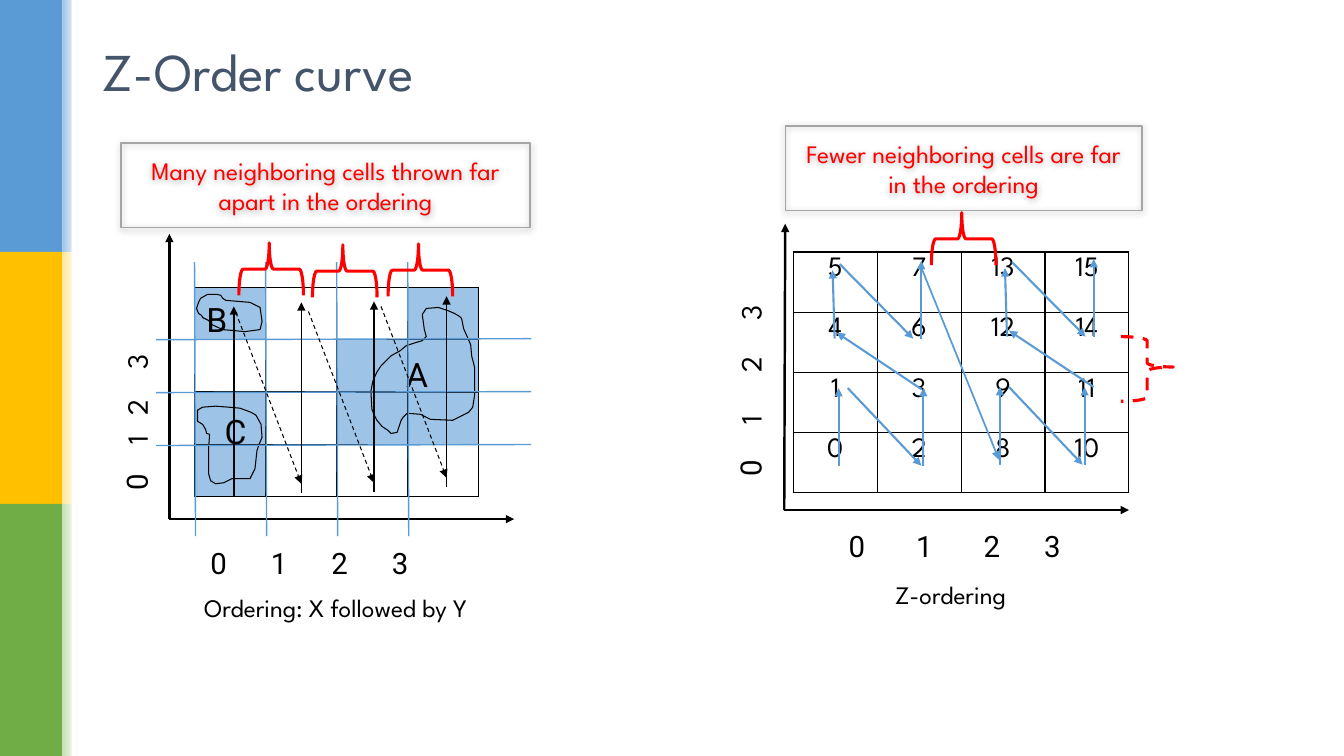
from dataclasses import dataclass
from typing import Any

from lxml import etree
from pptx import Presentation
from pptx import util as u
from pptx.dml.color import RGBColor
from pptx.enum import dml, shapes, text
from pptx.oxml import ns

GRID = u.Inches(0.1)
COLUMNS, ROWS = 133.33, 75
COLORS = {"black": "000000", "white": "FFFFFF", "title": "44546A", "blue": "5B9BD5", "pale": "9DC3E6",
          "red": "FF0000", "gray": "A5A5A5", "yellow": "FFC000", "cream": "FFE699", "green": "70AD47",
          "mint": "C5E0B4"}
SPARTAN, ROBOTO = "League Spartan", "Roboto"
CENTERED = {"alignment": text.PP_ALIGN.CENTER}
MIDDLE = {"word_wrap": True, "vertical_anchor": text.MSO_ANCHOR.MIDDLE}
Point = tuple[float, float]


@dataclass
class Area:
    left: float
    top: float
    width: float
    height: float

    def lengths(self) -> list[int]:
        return [grid(side) for side in (self.left, self.top, self.width, self.height)]


@dataclass
class Stroke:
    start: Point
    end: Point
    color: str = "blue"
    weight: float = 1.5
    arrow: bool = True
    dashed: bool = False

    def moved(self, column: float, row: float) -> "Stroke":
        (a, b), (c, d) = self.start, self.end
        return Stroke((a + column, b + row), (c + column, d + row), self.color, self.weight, self.arrow, self.dashed)


@dataclass
class Brace:
    area: Area
    rotation: int = 90
    dashed: bool = False


@dataclass
class Region:
    name: str
    margin_left: float
    margin_top: float
    outline: list[tuple[int, int]]


def grid(count: float) -> int:
    return round(count * GRID)


def rgb(name: str) -> RGBColor:
    return RGBColor.from_string(COLORS[name])


def apply(target: Any, values: dict[str, Any]) -> None:
    for name, value in values.items():
        setattr(target, name, value)


def write(frame: Any, words: str, size: float, font: str = SPARTAN, color: str = "black",
          frame_values: dict[str, Any] = MIDDLE, para_values: dict[str, Any] = CENTERED) -> None:
    apply(frame, frame_values)
    para = frame.paragraphs[0]
    apply(para, para_values)
    span = para.add_run()
    apply(span, {"text": words})
    apply(span.font, {"size": u.Pt(size), "name": font})
    span.font.color.rgb = rgb(color)


def style_line(line: Any, color: str, weight: float, dashed: bool = False) -> None:
    line.color.rgb = rgb(color)
    line.width = u.Pt(weight)
    if dashed:
        line.dash_style = dml.MSO_LINE.DASH


def draw_stroke(page: Any, stroke: Stroke) -> None:
    ends = [grid(value) for value in (*stroke.start, *stroke.end)]
    connector = page.shapes.add_connector(shapes.MSO_CONNECTOR.STRAIGHT, *ends)
    style_line(connector.line, stroke.color, stroke.weight, stroke.dashed)
    properties = connector._element.spPr
    if stroke.arrow:
        etree.SubElement(properties.find(ns.qn("a:ln")), ns.qn("a:tailEnd"), type="triangle")
    etree.SubElement(properties, ns.qn("a:effectLst"))


def draw_shape(page: Any, kind: Any, area: Area) -> Any:
    shape = page.shapes.add_shape(kind, *area.lengths())
    shape.shadow.inherit = False
    shape.fill.background()
    shape.line.fill.background()
    return shape


def draw_band(page: Any, area: Area, color: str, fade: bool = False) -> None:
    band = draw_shape(page, shapes.MSO_SHAPE.RECTANGLE, area)
    if fade:
        band.fill.gradient()
        band.fill.gradient_angle = 0
        for stop, name in zip(band.fill.gradient_stops, (color, "white")):
            stop.color.rgb = rgb(name)
    else:
        band.fill.solid()
        band.fill.fore_color.rgb = rgb(color)


def draw_brace(page: Any, brace: Brace) -> None:
    shape = draw_shape(page, shapes.MSO_SHAPE.LEFT_BRACE, brace.area)
    shape.rotation = brace.rotation
    shape.adjustments[0], shape.adjustments[1] = 0.08, 0.53
    style_line(shape.line, "red", 2.25, brace.dashed)


def draw_callout(page: Any, area: Area, words: str) -> None:
    box = draw_shape(page, shapes.MSO_SHAPE.RECTANGLE, area)
    style_line(box.line, "gray", 1)
    effects = box._element.spPr.find(ns.qn("a:effectLst"))
    shadow = etree.SubElement(effects, ns.qn("a:outerShdw"), blurRad=str(u.Pt(5)), dist=str(u.Pt(1)),
                              dir="5400000", algn="t", rotWithShape="0")
    tint = etree.SubElement(shadow, ns.qn("a:srgbClr"), val=COLORS["black"])
    etree.SubElement(tint, ns.qn("a:alpha"), val="32000")
    write(box.text_frame, words, 18, color="red")


def draw_text(page: Any, area: Area, words: str, size: float, font: str = SPARTAN, rotation: int = 0) -> None:
    box = page.shapes.add_textbox(*area.lengths())
    box.rotation = rotation
    write(box.text_frame, words, size, font)


def draw_axis_labels(page: Any, centers: list[Point], upright: bool) -> None:
    for number, (column, row) in enumerate(centers):
        font = ROBOTO if upright or number == 0 else SPARTAN
        draw_text(page, Area(column - 2.5, row - 2.5, 5, 5), str(number), 21, font, 0 if upright else 270)


def draw_table(page: Any, area: Area, rows: list[list[str]], fills: list[list[str]]) -> None:
    table = page.shapes.add_table(4, 4, *area.lengths()).table
    apply(table, {"first_row": False, "horz_banding": False})
    for row in range(4):
        table.rows[row].height = grid(area.height / 4)
        table.columns[row].width = grid(area.width / 4)
        for column in range(4):
            cell = table.cell(row, column)
            if fills[row][column]:
                cell.fill.solid()
                cell.fill.fore_color.rgb = rgb(fills[row][column])
            else:
                cell.fill.background()
            for place, side in enumerate(("lnL", "lnR", "lnT", "lnB")):
                border = etree.Element(ns.qn(f"a:{side}"), w=str(u.Pt(1)))
                paint = etree.SubElement(border, ns.qn("a:solidFill"))
                etree.SubElement(paint, ns.qn("a:srgbClr"), val=COLORS["black"])
                cell._tc.get_or_add_tcPr().insert(place, border)
            if rows[row][column]:
                write(cell.text_frame, rows[row][column], 20, frame_values={})


def draw_region(page: Any, region: Region) -> None:
    builder = page.shapes.build_freeform(*region.outline[0], scale=GRID / 10)
    builder.add_line_segments(region.outline[1:], close=True)
    shape = builder.convert_to_shape()
    shape.shadow.inherit = False
    shape.fill.background()
    style_line(shape.line, "black", 0.75)
    write(shape.text_frame, region.name, 24, ROBOTO, frame_values={
        "word_wrap": True, "vertical_anchor": text.MSO_ANCHOR.TOP, "margin_right": 0,
        "margin_left": grid(region.margin_left), "margin_top": grid(region.margin_top)},
        para_values={"alignment": text.PP_ALIGN.LEFT})


REGIONS = [
    Region("A", 3.5, 4.6, [
        (378, 363), (374, 369), (370, 378), (368, 388), (369, 406), (371, 411), (374, 417), (379, 423), (385, 427),
        (388, 430), (394, 429), (398, 417), (400, 414), (404, 410), (417, 411), (427, 416), (449, 417), (457, 413),
        (465, 409), (469, 404), (471, 391), (471, 365), (468, 353), (467, 342), (464, 335), (460, 326), (458, 316),
        (456, 314), (451, 311), (444, 308), (435, 305), (423, 306), (419, 312), (421, 327), (423, 334), (419, 338),
        (412, 340), (403, 343), (397, 348), (388, 353), (383, 358)]),
    Region("B", 1, 0.5, [
        (201, 315), (207, 318), (210, 322), (221, 327), (243, 329), (258, 327), (260, 319), (258, 305), (248, 300),
        (224, 298), (221, 296), (219, 293), (215, 292), (206, 292), (199, 296), (197, 300), (195, 306), (197, 311),
        (200, 313)]),
    Region("C", 2.7, 0.5, [
        (208, 431), (207, 445), (207, 470), (209, 477), (214, 480), (222, 479), (230, 475), (248, 475), (253, 465),
        (255, 447), (257, 441), (260, 434), (259, 421), (254, 412), (249, 409), (238, 405), (227, 404), (214, 403),
        (201, 404), (196, 407), (196, 418), (201, 421), (204, 426), (205, 430)])]
Z_NUMBERS = [["5", "7", "13", "15"], ["4", "6", "12", "14"], ["1", "3", "9", "11"], ["0", "2", "8", "10"]]
OCCUPIED = ["X..X", "..XX", "X.XX", "X..."]
LOWER_BLOCK = [Stroke((0, 0), (0, -7.7)), Stroke((0.9, -7.7), (8.2, 0)), Stroke((8.4, 0), (8.4, -7.7))]
UPPER_BLOCK = [Stroke((0, 0), (-0.2, -6.8)), Stroke((0.5, -7.4), (7.8, 0)), Stroke((8.6, 0), (8.6, -7.7))]
BLOCKS = [(LOWER_BLOCK, 83.2, 46.2), (UPPER_BLOCK, 82.8, 33.6), (LOWER_BLOCK, 99.2, 46.1), (UPPER_BLOCK, 99.9, 33.4)]
LINKS = [Stroke((91.4, 38.6), (83, 33)), Stroke((91.3, 26.3), (99.1, 45.6), weight=1.25),
         Stroke((108.5, 38.4), (100.1, 32.8))]
AXES = [Stroke(start, end, "black", 1.75) for start, end in (
    ((77.8, 50.6), (112, 50.6)), ((77.8, 50.6), (77.9, 22.2)),
    ((16.8, 51.5), (51, 51.5)), ((16.8, 51.5), (16.8, 23.2)))]
GUIDES = ([Stroke((19.3 + 7.05 * i, 26), (19.4 + 7.05 * i, 53.2), weight=1, arrow=False) for i in range(4)]
          + [Stroke((15.5, 33.7 + 5.25 * i), (52.7, 33.6 + 5.25 * i), weight=1, arrow=False) for i in range(3)])
SWEEPS = [Stroke((column, top + 18.9), (column, top), "black", 1.25)
          for column, top in ((23.2, 30.4), (29.9, 30), (37.1, 29.9), (44.3, 29.4))]
RETURNS = [Stroke((column, row), (column + 6.5, row + 17), "black", 0.75, dashed=True)
           for column, row in ((23.4, 31), (30.6, 30.9), (37.8, 30.4))]
BRACES = [Brace(Area(column, row, 5.2, 6.4)) for column, row in ((24.3, 23.5), (31.6, 23.7), (39.1, 23.6), (93, 20.5))]
BRACES.append(Brace(Area(111.2, 33.4, 5.2, 6.4), 180, True))


def main() -> None:
    deck = Presentation()
    apply(deck, {"slide_width": grid(COLUMNS), "slide_height": grid(ROWS)})
    page = deck.slides.add_slide(deck.slide_layouts[5])
    for index, (color, pale) in enumerate((("blue", "pale"), ("yellow", "cream"), ("green", "mint"))):
        draw_band(page, Area(0, index * ROWS / 3, 6.2, ROWS / 3), color)
        draw_band(page, Area(6.2, index * ROWS / 3, 1.6, ROWS / 3), pale, fade=True)
    draw_band(page, Area(7.1, 0, 0.5, ROWS), "white")

    title = page.shapes.title
    apply(title, dict(zip(("left", "top", "width", "height"), Area(9.2, 1.5, 115, 11).lengths())))
    write(title.text_frame, "Z-Order curve", 38, color="title",
          frame_values={**MIDDLE, "auto_size": text.MSO_AUTO_SIZE.NONE},
          para_values={"alignment": text.PP_ALIGN.LEFT})

    draw_table(page, Area(78.7, 25, 33.3, 23.9), Z_NUMBERS, [["white"] * 4] * 4)
    draw_table(page, Area(19.3, 28.5, 28.2, 20.8), [[""] * 4] * 4,
               [["pale" if mark == "X" else "" for mark in row] for row in OCCUPIED])
    draw_axis_labels(page, [(column, 54.1) for column in (85, 91.7, 98.4, 104.4)], True)
    draw_axis_labels(page, [(74.4, row) for row in (46.4, 41.7, 36.2, 31)], False)
    draw_axis_labels(page, [(21.7 + 6 * index, 55.8) for index in range(4)], True)
    draw_axis_labels(page, [(13.5, row) for row in (47.8, 43.7, 40.4, 35.9)], False)
    for region in REGIONS:
        draw_region(page, region)
    curve = [stroke.moved(column, row) for block, column, row in BLOCKS for stroke in block]
    for stroke in AXES + curve + LINKS + GUIDES + SWEEPS + RETURNS:
        draw_stroke(page, stroke)
    for brace in BRACES:
        draw_brace(page, brace)
    draw_callout(page, Area(12, 14.2, 40.6, 8.4), "Many neighboring cells thrown far apart in the ordering")
    draw_callout(page, Area(77.9, 12.5, 35.4, 8.4), "Fewer neighboring cells are far in the ordering")
    draw_text(page, Area(13, 58, 40.6, 4.6), "Ordering: X followed by Y", 18)
    draw_text(page, Area(74, 56.7, 40.6, 4.6), "Z-ordering", 18)
    deck.save("out.pptx")


if __name__ == "__main__":
    main()
